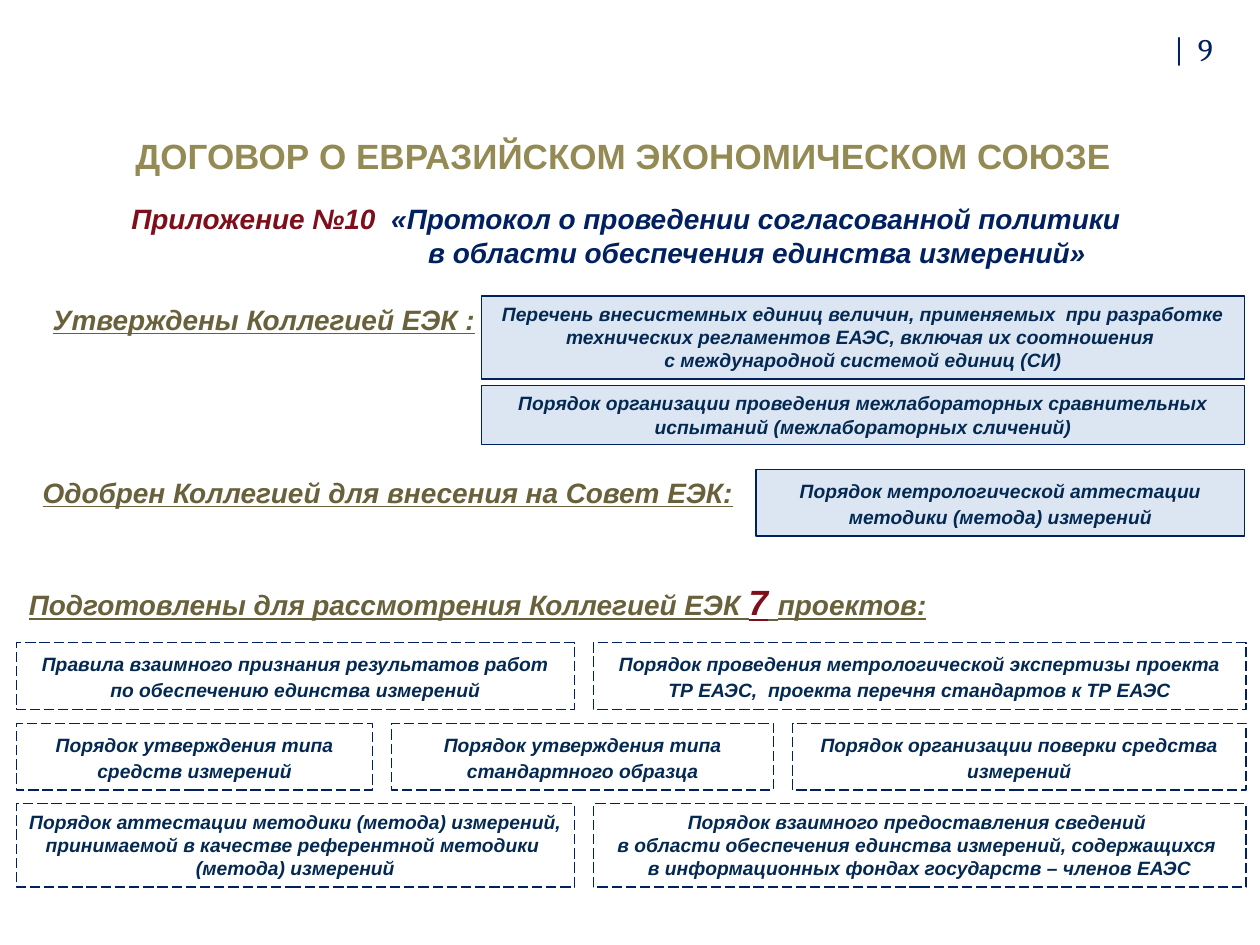
from pptx import Presentation
from pptx.dml.color import RGBColor
from pptx.enum import dml, shapes, text
from pptx.util import Pt

HUES = {"navy": "002060", "ink": "032953", "gold": "948A54",
        "olive": "69613B", "red": "7E0E19", "pale": "DCE6F2"}
COLS, ROWS = 100, 75
ITEM = {"size": Pt(11), "bold": True, "italic": True, "name": "Arial"}
HEAD = {**ITEM, "size": Pt(16)}
LABEL = {**HEAD, "underline": True}

deck = Presentation()
deck.slide_width, deck.slide_height = Pt(720), Pt(540)
slide = deck.slides.add_slide(deck.slide_layouts[5])


def hue(key):
    """Return the named colour."""
    return RGBColor.from_string(HUES[key])


def place(box):
    """Turn a box of grid columns and rows into slide lengths."""
    col, row, wide, high = box
    unit_x, unit_y = deck.slide_width / COLS, deck.slide_height / ROWS
    return [round(n) for n in
            (col * unit_x, row * unit_y, wide * unit_x, high * unit_y)]


def write(para, words, tint, form):
    """Add formatted words, breaking the line at each newline."""
    for num, line in enumerate(words.split("\n")):
        if num:
            para.add_line_break()
        run = para.add_run()
        run.text = line
        for key, value in form.items():
            setattr(run.font, key, value)
        run.font.color.rgb = hue(tint)


def label(box, parts):
    """Place a text box of styled parts and return its frame."""
    frame = slide.shapes.add_textbox(*place(box)).text_frame
    frame.word_wrap = True
    for part in parts:
        write(frame.paragraphs[0], *part)
    return frame


def card(box, words, solid, space=1.0):
    """Place one outlined box, filled if solid and dashed if not."""
    shape = slide.shapes.add_shape(shapes.MSO_SHAPE.RECTANGLE, *place(box))
    shape.shadow.inherit = False
    shape.line.color.rgb = hue("navy")
    shape.line.width = Pt(0.75)
    if solid:
        shape.fill.solid()
        shape.fill.fore_color.rgb = hue("pale")
    else:
        shape.fill.background()
        shape.line.dash_style = dml.MSO_LINE.LONG_DASH
    frame = shape.text_frame
    frame.word_wrap = True
    frame.vertical_anchor = text.MSO_ANCHOR.TOP
    para = frame.paragraphs[0]
    para.alignment = text.PP_ALIGN.CENTER
    para.line_spacing = space
    write(para, words, "ink", ITEM)


def header(box):
    """Place the page number, the title and the subtitle."""
    left, top, wide, high = box
    label((92.2, top, 6.7, 4.2),
          [("|  9", "navy", {"size": Pt(18), "name": "Cambria"})])
    title = slide.shapes.title
    title.left, title.top, title.width, title.height = place(
        (left + 1.6, top + 7.4, 95.7, 6.1))
    frame = title.text_frame
    frame.auto_size = text.MSO_AUTO_SIZE.NONE
    frame.vertical_anchor = text.MSO_ANCHOR.MIDDLE
    frame.paragraphs[0].alignment = text.PP_ALIGN.CENTER
    write(frame.paragraphs[0], "ДОГОВОР О ЕВРАЗИЙСКОМ ЭКОНОМИЧЕСКОМ СОЮЗЕ",
          "gold", {"size": Pt(20), "bold": True, "name": "Arial"})
    frame = label((left, top + 13.6, wide, 6.4), [
        ("Приложение №10  ", "red", HEAD),
        ("«Протокол о проведении согласованной политики ", "navy", HEAD)])
    last = frame.add_paragraph()
    last._p.get_or_add_pPr().set("marL", str(place((20.8, 0, 0, 0))[0]))
    write(last, "в области обеспечения единства измерений» ", "navy", HEAD)
    for para in frame.paragraphs:
        para.alignment = text.PP_ALIGN.CENTER


def adopted(box):
    """Place the adopted documents in a stack beside their label."""
    left, top, wide, _ = box
    label((left, top, 75.2, 3.7), [("Утверждены Коллегией ЕЭК :", "olive", LABEL)])
    stack = [
        (6.6, "Перечень внесистемных единиц величин, применяемых  при разработке "
              "технических регламентов ЕАЭС, включая их соотношения \n"
              "с международной системой единиц (СИ)"),
        (4.7, "Порядок организации проведения межлабораторных сравнительных "
              "испытаний (межлабораторных сличений)")]
    for high, words in stack:
        card((left + wide - 60.6, top, 60.6, high), words, True)
        top += high + 0.5


def agreed(box):
    """Place the document sent to the Council beside its label."""
    left, top, wide, high = box
    label((left, top, 75.2, 3.7),
          [("Одобрен Коллегией для внесения на Совет ЕЭК:", "olive", LABEL)])
    card((left + wide - 38.8, top, 38.8, high),
         "Порядок метрологической аттестации методики (метода) измерений", True, 1.15)


def drafts(box):
    """Place the draft documents in rows under their label."""
    left, top, wide, _ = box
    big = {**LABEL, "size": Pt(20)}
    label((left, top, 75.2, 4.4), [
        ("Подготовлены для рассмотрения Коллегией ЕЭК ", "olive", LABEL),
        ("7", "red", big), (" ", "olive", big), ("проектов:", "olive", LABEL)])
    gap, top = 1.5, top + 5.4
    rows = [
        (5.3, 1.15, [44.3], [
            "Правила взаимного признания результатов работ по обеспечению "
            "единства измерений",
            "Порядок проведения метрологической экспертизы проекта ТР ЕАЭС,  "
            "проекта перечня стандартов к ТР ЕАЭС"]),
        (5.3, 1.15, [28.3, 30.3], [
            "Порядок утверждения типа средств измерений",
            "Порядок утверждения типа стандартного образца",
            "Порядок организации поверки средства измерений"]),
        (6.6, 1.0, [44.3], [
            "Порядок аттестации методики (метода) измерений, принимаемой "
            "в качестве референтной методики \n(метода) измерений",
            "Порядок взаимного предоставления сведений \n"
            "в области обеспечения единства измерений, содержащихся \n"
            "в информационных фондах государств – членов ЕАЭС"])]
    for high, space, spans, items in rows:
        rest = wide - sum(spans) - gap * len(spans)
        col = left
        for span, words in zip(spans + [rest], items):
            card((col, top, span, high), words, False, space)
            col += span + gap
        top += high + 1.1


header((0, 1.9, COLS, 20))
adopted((3.2, 23.5, 95.6, 11.8))
agreed((2.4, 37.25, 96.4, 5.3))
drafts((1.3, 45.6, 97.6, 24.8))
deck.save("out.pptx")
